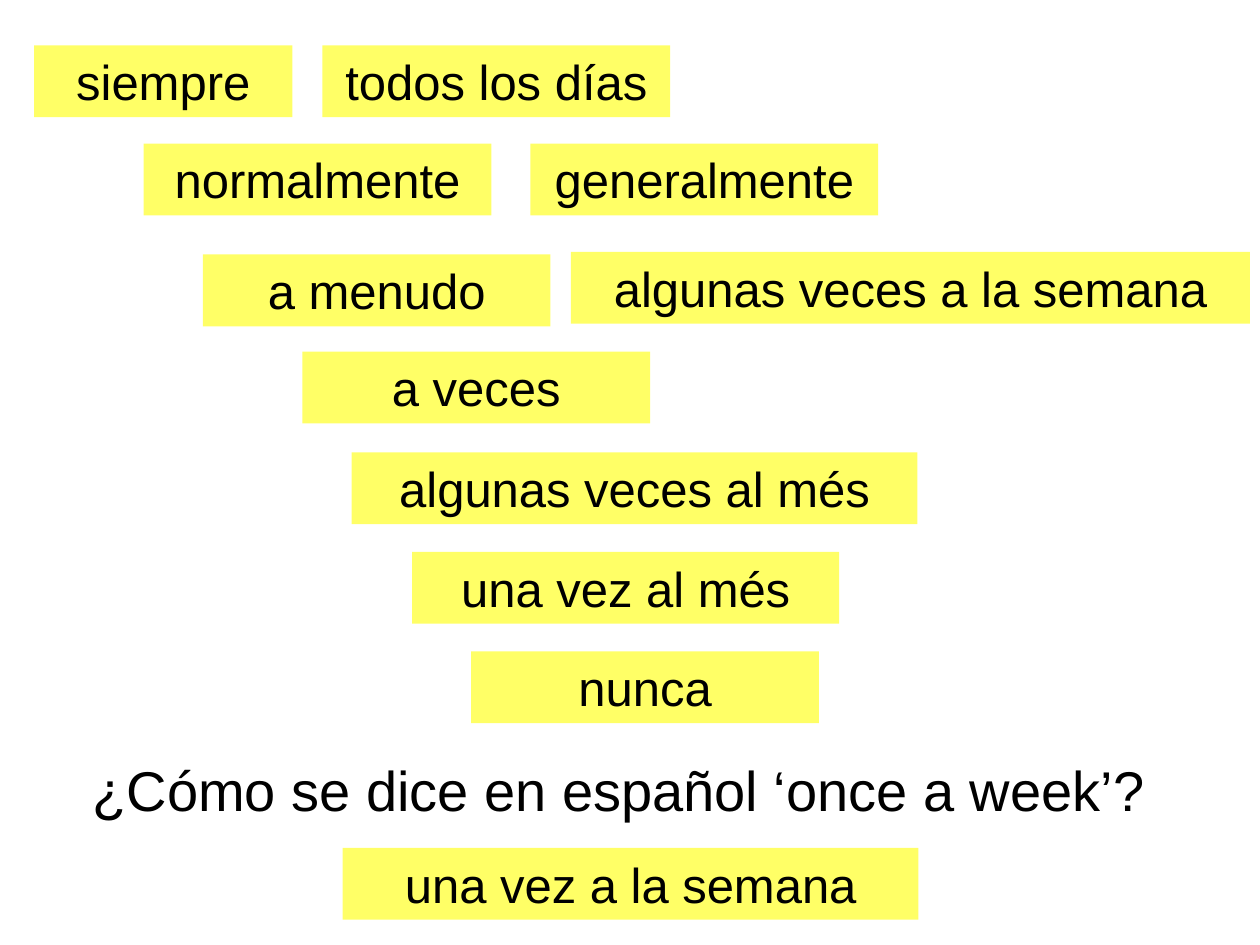
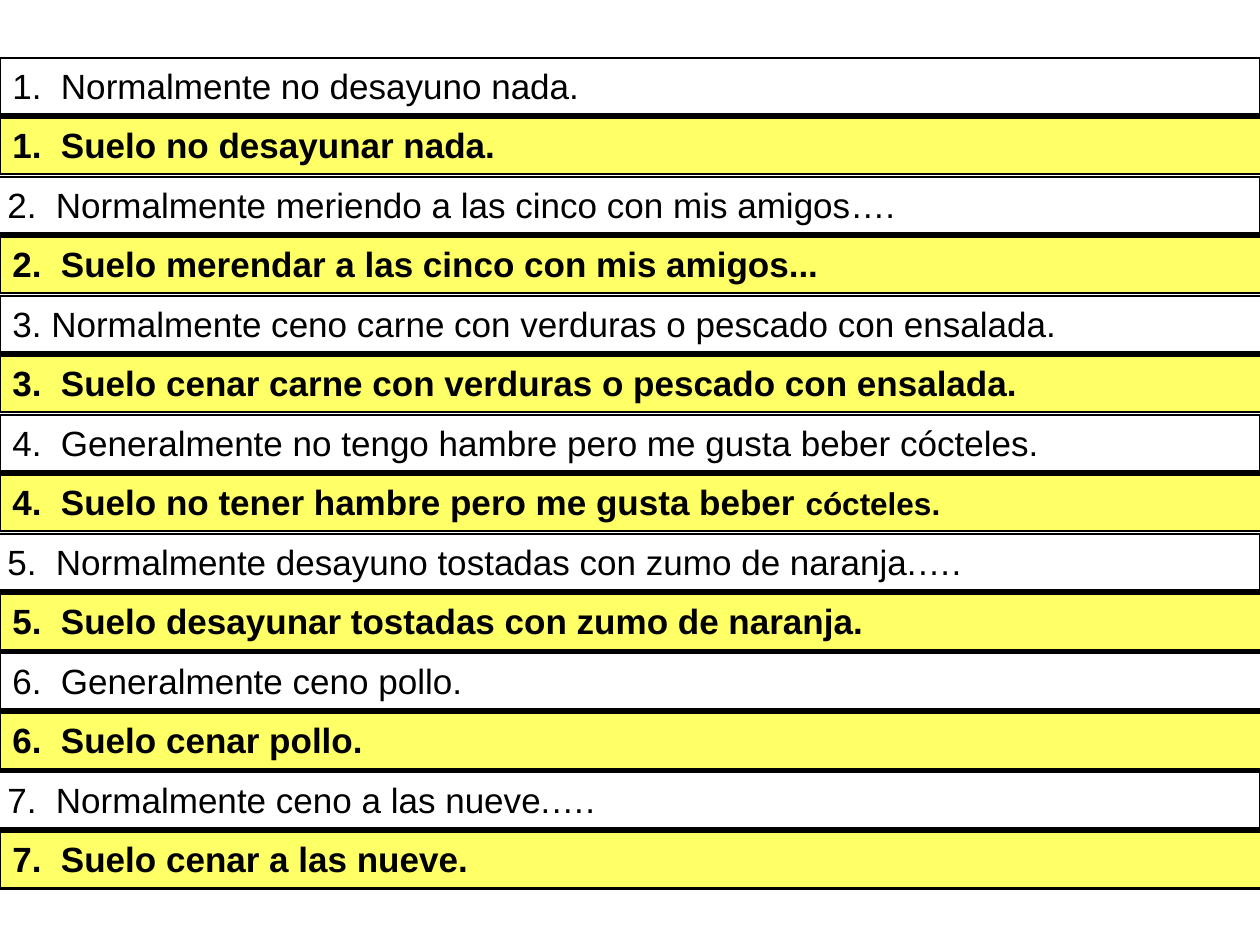
from dataclasses import dataclass

from lxml import etree
from pptx import Presentation
from pptx import util as u
from pptx.dml import color
from pptx.enum import shapes, text
from pptx.oxml import ns


@dataclass(frozen=True)
class Theme:
    face: str = "Arial"
    ink: str = "000000"
    mark: str = "FFFF66"
    word: int = 28
    ask: int = 32
    row: int = 20
    small: int = 18
    edge: float = 1.5


THEME = Theme()
WORD_H = 0.57
ROW_TOP, ROW_END, ROW_H = 0.46, 6.6, 0.45
EDGE, OVER = 10, 10.04

WORDS = [
    ("siempre", 0.27, 0.36, 2.05),
    ("normalmente", 1.14, 1.14, 2.76),
    ("generalmente", 4.21, 1.14, 2.76),
    ("todos los días", 2.56, 0.36, 2.76),
    ("a menudo", 1.61, 2.02, 2.76),
    ("algunas veces a la semana", 4.53, 2, 5.39),
    ("a veces", 2.4, 2.79, 2.76),
    ("algunas veces al més", 2.79, 3.59, 4.49),
    ("una vez al més", 3.27, 4.38, 3.39),
    ("nunca", 3.74, 5.17, 2.76),
    ("una vez a la semana", 2.72, 6.73, 4.57),
]

PAIRS = [
    ("1.  Normalmente no desayuno nada.", 0, EDGE,
     ["1.  Suelo no desayunar nada."]),
    ("2.  Normalmente meriendo a las cinco con mis amigos….", -0.04, EDGE,
     ["2.  Suelo merendar a las cinco con mis amigos..."]),
    ("3. Normalmente ceno carne con verduras o pescado con ensalada.", 0, OVER,
     ["3.  Suelo cenar carne con verduras o pescado con ensalada."]),
    ("4.  Generalmente no tengo hambre pero me gusta beber cócteles.", 0, EDGE,
     ["4.  Suelo no tener hambre pero me gusta beber ", "cócteles."]),
    ("5.  Normalmente desayuno tostadas con zumo de naranja.….", -0.04, EDGE,
     ["5.  Suelo desayunar tostadas con zumo de naranja."]),
    ("6.  Generalmente ceno pollo.", 0, OVER,
     ["6.  Suelo cenar pollo."]),
    ("7.  Normalmente ceno a las nueve.….", -0.04, EDGE,
     ["7.  Suelo cenar a las nueve."]),
]


class Deck:
    def __init__(self, theme):
        self.theme = theme
        self.prs = Presentation()
        self.prs.slide_width = u.Inches(10)
        self.prs.slide_height = u.Inches(7.5)
        self.slide = None

    def page(self):
        self.slide = self.prs.slides.add_slide(self.prs.slide_layouts[6])

    def put(self, item, values):
        for name, value in values.items():
            setattr(item, name, value)

    def label(self, shape, parts, align, bold=False):
        frame = shape.text_frame
        self.put(frame, {
            "word_wrap": True,
            "auto_size": text.MSO_AUTO_SIZE.SHAPE_TO_FIT_TEXT,
            "vertical_anchor": text.MSO_ANCHOR.TOP,
        })
        para = frame.paragraphs[0]
        para.alignment = align
        space = etree.SubElement(para._p.get_or_add_pPr(), ns.qn("a:spcBef"))
        etree.SubElement(space, ns.qn("a:spcPct")).set("val", "50000")
        for words, size in parts:
            run = para.add_run()
            run.text = words
            self.put(run.font, {"name": self.theme.face, "size": u.Pt(size), "bold": bold})
            run.font.color.rgb = color.RGBColor.from_string(self.theme.ink)

    def box(self, place, fill=None, line=False):
        shape = self.slide.shapes.add_shape(
            shapes.MSO_SHAPE.RECTANGLE, *map(u.Inches, place))
        shape.shadow.inherit = False
        if fill:
            shape.fill.solid()
            shape.fill.fore_color.rgb = color.RGBColor.from_string(fill)
        else:
            shape.fill.background()
        if line:
            shape.line.width = u.Pt(self.theme.edge)
            shape.line.color.rgb = color.RGBColor.from_string(self.theme.ink)
        else:
            shape.line.fill.background()
        return shape

    def card(self, words, left, top, width):
        shape = self.box((left, top, width, WORD_H), self.theme.mark)
        self.label(shape, [(words, self.theme.word)], text.PP_ALIGN.CENTER)

    def ask(self, words, place):
        shape = self.slide.shapes.add_textbox(*map(u.Inches, place))
        self.label(shape, [(words, self.theme.ask)], text.PP_ALIGN.CENTER)

    def row(self, parts, left, top, right, key=False):
        fill = self.theme.mark if key else None
        shape = self.box((left, top, right - left, ROW_H), fill, line=True)
        sizes = (self.theme.row, self.theme.small)
        self.label(shape, zip(parts, sizes), text.PP_ALIGN.LEFT, key)


def main():
    deck = Deck(THEME)

    deck.page()
    for word in WORDS:
        deck.card(*word)
    deck.ask("¿Cómo se dice en español ‘once a week’?", (0.27, 5.95, 9.29, 0.63))

    deck.page()
    step = (ROW_END - ROW_TOP) / (2 * len(PAIRS) - 1)
    for i, (prompt, left, right, answer) in enumerate(PAIRS):
        top = ROW_TOP + 2 * i * step
        deck.row([prompt], left, top, right)
        deck.row(answer, 0, top + step, OVER, key=True)

    deck.prs.save("out.pptx")


if __name__ == "__main__":
    main()
